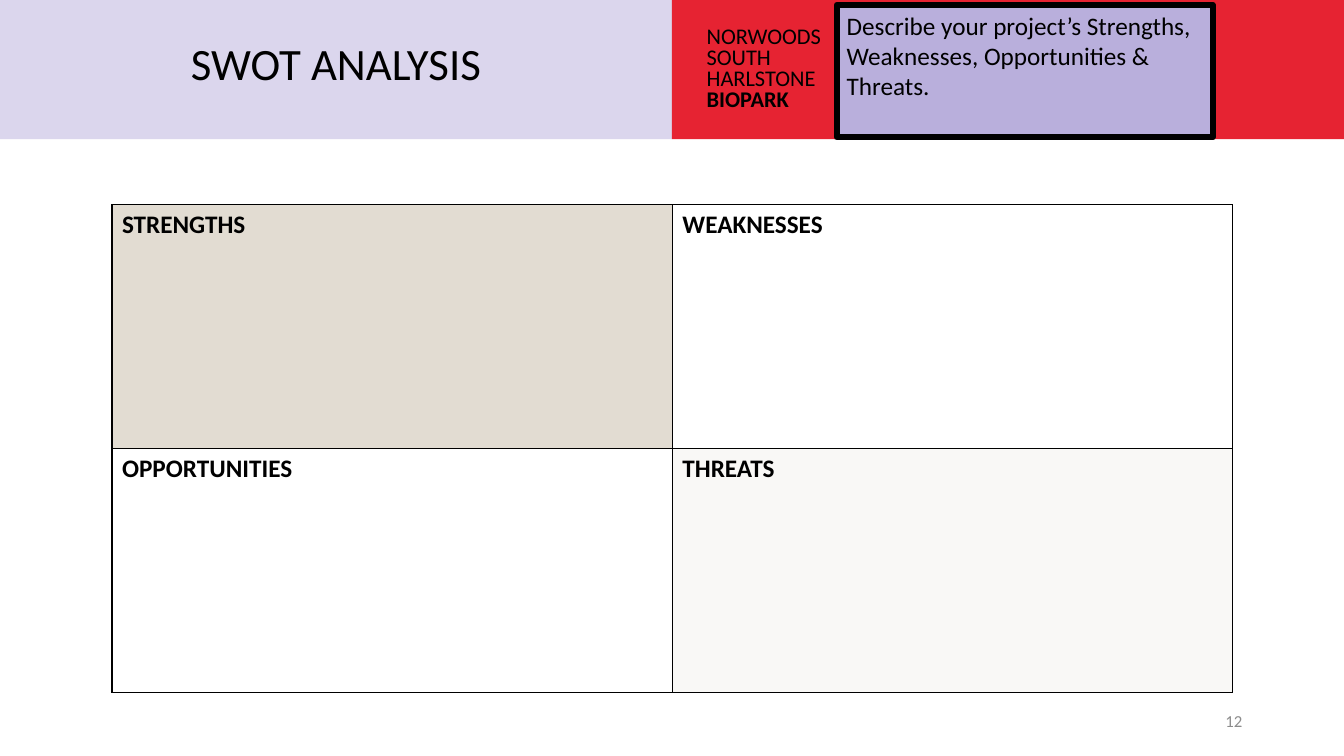
from dataclasses import dataclass
from typing import Any, Optional

from lxml.etree import SubElement
from pptx import Presentation
from pptx.dml.color import RGBColor
from pptx.dml.fill import FillFormat
from pptx.enum.text import MSO_ANCHOR as Anchor, MSO_AUTO_SIZE as AutoSize, PP_ALIGN as Align
from pptx.enum.shapes import MSO_SHAPE as Preset
from pptx.oxml.ns import qn
from pptx.slide import Slide
from pptx.util import Inches, Pt

WIDTH, HEIGHT = Inches(13.33), Inches(7.5)
COLUMN, ROW = WIDTH / 100, HEIGHT / 100
BLACK, WHITE, LILAC, RED, SAND, GREY = "000000", "FFFFFF", "B9AFDC", "E62332", "E2DCD2", "8C8C8C"


@dataclass(frozen=True)
class Area:
    """Place on a grid of 100 columns by 100 rows."""
    column: float
    row: float
    columns: float
    rows: float

    def emu(self) -> tuple[int, int, int, int]:
        """Return left, top, width and height in slide units."""
        return (round(self.column * COLUMN), round(self.row * ROW),
                round(self.columns * COLUMN), round(self.rows * ROW))


@dataclass(frozen=True)
class Panel:
    """Filled rectangle with an optional outline."""
    area: Area
    color: str
    opacity: int = 100
    outline: Optional[float] = None


@dataclass(frozen=True)
class Style:
    """Look of the text in one frame."""
    size: float
    color: str = BLACK
    bold: bool = False
    align: Align = Align.LEFT
    anchor: Anchor = Anchor.MIDDLE
    leading: Optional[float] = None


@dataclass(frozen=True)
class Quadrant:
    """One cell of the SWOT matrix."""
    heading: str
    color: Optional[str] = None
    opacity: int = 100


BANDS = [Panel(Area(0, 0, 50, 18.4), LILAC, 50), Panel(Area(50, 0, 50, 18.4), RED)]
BRIEF = Panel(Area(62.26, 0.67, 27.98, 17.47), LILAC, outline=4.5)
TITLE_AREA = Area(0, 0, 50, 18.13)
SITE_AREA = Area(51.84, 3.73, 14.63, 11.07)
NUMBER_AREA = Area(70.67, 92.67, 22.5, 5.33)
MATRIX_AREA = Area(8.33, 27.07, 83.4, 64.53)
SITE_LINES = ["NORWOODS", "SOUTH", "HARLSTONE", "BIOPARK"]
MATRIX = [
    [Quadrant("STRENGTHS", SAND), Quadrant("WEAKNESSES")],
    [Quadrant("OPPORTUNITIES", WHITE, 20), Quadrant("THREATS", SAND, 20)],
]


def rgb(color: str) -> RGBColor:
    """Turn a hex string into a colour."""
    return RGBColor.from_string(color)


def apply(target: Any, values: dict[str, Any]) -> None:
    """Set every named attribute on the target."""
    for attribute, value in values.items():
        setattr(target, attribute, value)


def paint(fill: FillFormat, color: str, opacity: int, parent: Any) -> None:
    """Fill with a colour, see-through when opacity is below 100."""
    fill.solid()
    fill.fore_color.rgb = rgb(color)
    if opacity < 100:
        tint = parent.find(f"{qn('a:solidFill')}/{qn('a:srgbClr')}")
        SubElement(tint, qn("a:alpha"), val=str(opacity * 1000))


def write(frame: Any, lines: list[str], style: Style) -> None:
    """Write one paragraph per line in the given style."""
    apply(frame, {"word_wrap": True, "vertical_anchor": style.anchor})
    for index, line in enumerate(lines):
        paragraph = frame.add_paragraph() if index else frame.paragraphs[0]
        apply(paragraph, {"alignment": style.align, "space_before": Pt(0)})
        if style.leading:
            paragraph.line_spacing = Pt(style.leading)
        run = paragraph.add_run()
        run.text = line
        apply(run.font, {"name": "Calibri", "size": Pt(style.size), "bold": style.bold})
        run.font.color.rgb = rgb(style.color)


def draw_panel(slide: Slide, panel: Panel) -> Any:
    """Draw a rectangle and return it."""
    shape = slide.shapes.add_shape(Preset.RECTANGLE, *panel.area.emu())
    shape.shadow.inherit = False
    paint(shape.fill, panel.color, panel.opacity, shape.element.spPr)
    if panel.outline:
        shape.line.color.rgb = rgb(BLACK)
        shape.line.width = Pt(panel.outline)
    else:
        shape.line.fill.background()
    return shape


def draw_label(slide: Slide, area: Area, lines: list[str], style: Style) -> Any:
    """Add a text box and return its frame."""
    frame = slide.shapes.add_textbox(*area.emu()).text_frame
    write(frame, lines, style)
    return frame


def draw_title(slide: Slide, text: str) -> None:
    """Place the title in front of the header bands."""
    title = slide.shapes.title
    title.element.getparent().append(title.element)
    apply(title, dict(zip(("left", "top", "width", "height"), TITLE_AREA.emu())))
    apply(title.text_frame, {"auto_size": AutoSize.NONE, "margin_left": Inches(0.2),
                             "margin_right": Inches(0.2), "margin_top": 0, "margin_bottom": 0})
    write(title.text_frame, [text], Style(32, align=Align.CENTER, leading=30))


def draw_matrix(slide: Slide) -> None:
    """Draw the two by two SWOT table."""
    table = slide.shapes.add_table(len(MATRIX), len(MATRIX[0]), *MATRIX_AREA.emu()).table
    apply(table, {"first_row": False, "horz_banding": False})
    for row, quadrants in enumerate(MATRIX):
        for column, quadrant in enumerate(quadrants):
            cell = table.cell(row, column)
            write(cell.text_frame, [quadrant.heading], Style(18, bold=True, anchor=Anchor.TOP))
            properties = cell._tc.get_or_add_tcPr()
            for side in ("a:lnL", "a:lnR", "a:lnT", "a:lnB"):
                border = SubElement(properties, qn(side), w=str(Pt(1)))
                SubElement(SubElement(border, qn("a:solidFill")), qn("a:srgbClr"), val=BLACK)
            if quadrant.color:
                paint(cell.fill, quadrant.color, quadrant.opacity, properties)
            else:
                cell.fill.background()


def main() -> None:
    """Build and save the slide."""
    deck = Presentation()
    apply(deck, {"slide_width": WIDTH, "slide_height": HEIGHT})
    slide = deck.slides.add_slide(deck.slide_layouts[5])
    for band in BANDS:
        draw_panel(slide, band)
    site = draw_label(slide, SITE_AREA, SITE_LINES, Style(16, leading=15))
    site.paragraphs[-1].runs[0].font.bold = True
    draw_title(slide, "SWOT ANALYSIS")
    draw_label(slide, NUMBER_AREA, ["12"], Style(12, GREY, align=Align.RIGHT))
    write(draw_panel(slide, BRIEF).text_frame,
          ["Describe your project’s Strengths, Weaknesses, Opportunities & Threats."],
          Style(18, anchor=Anchor.TOP))
    draw_matrix(slide)
    deck.save("out.pptx")


if __name__ == "__main__":
    main()
